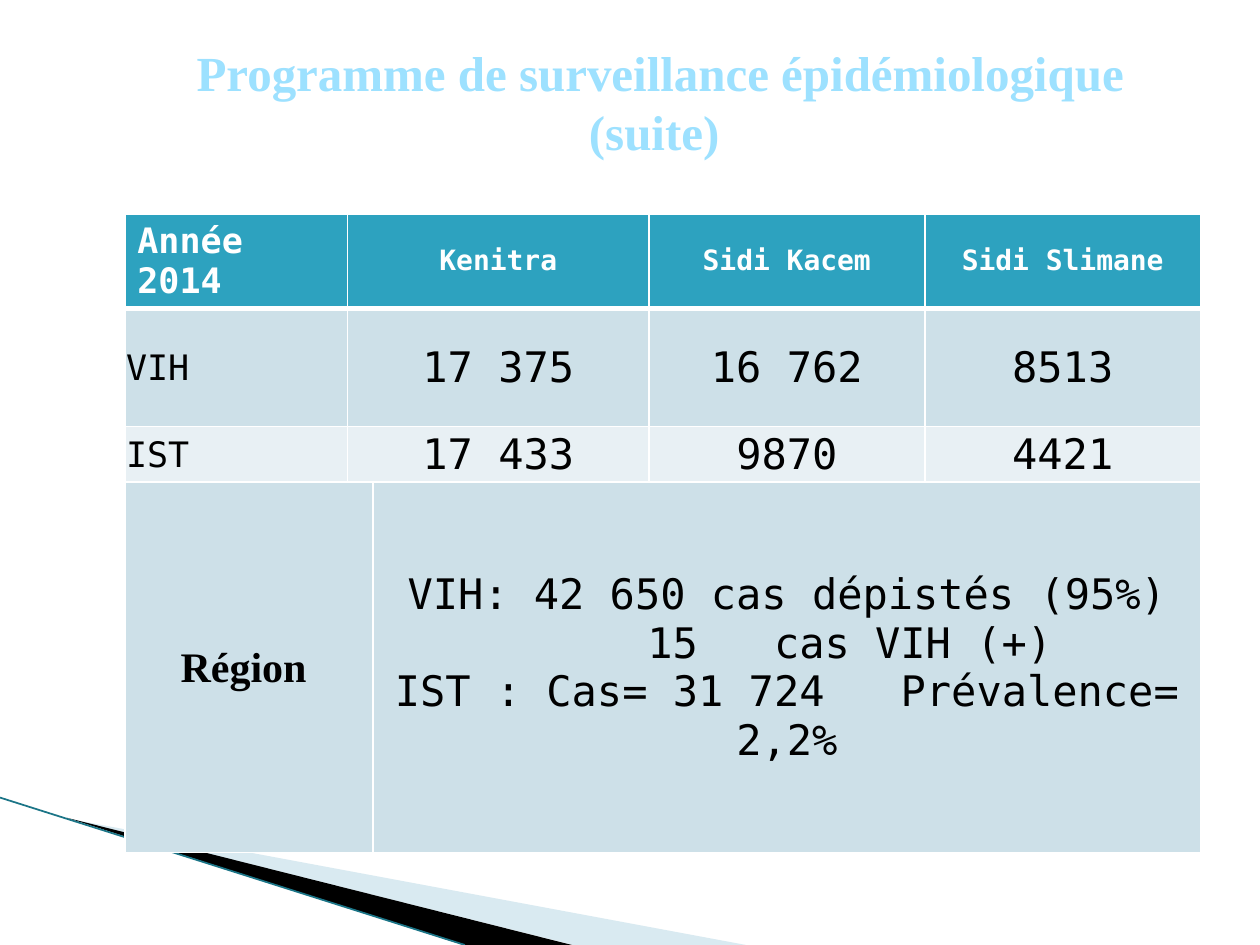
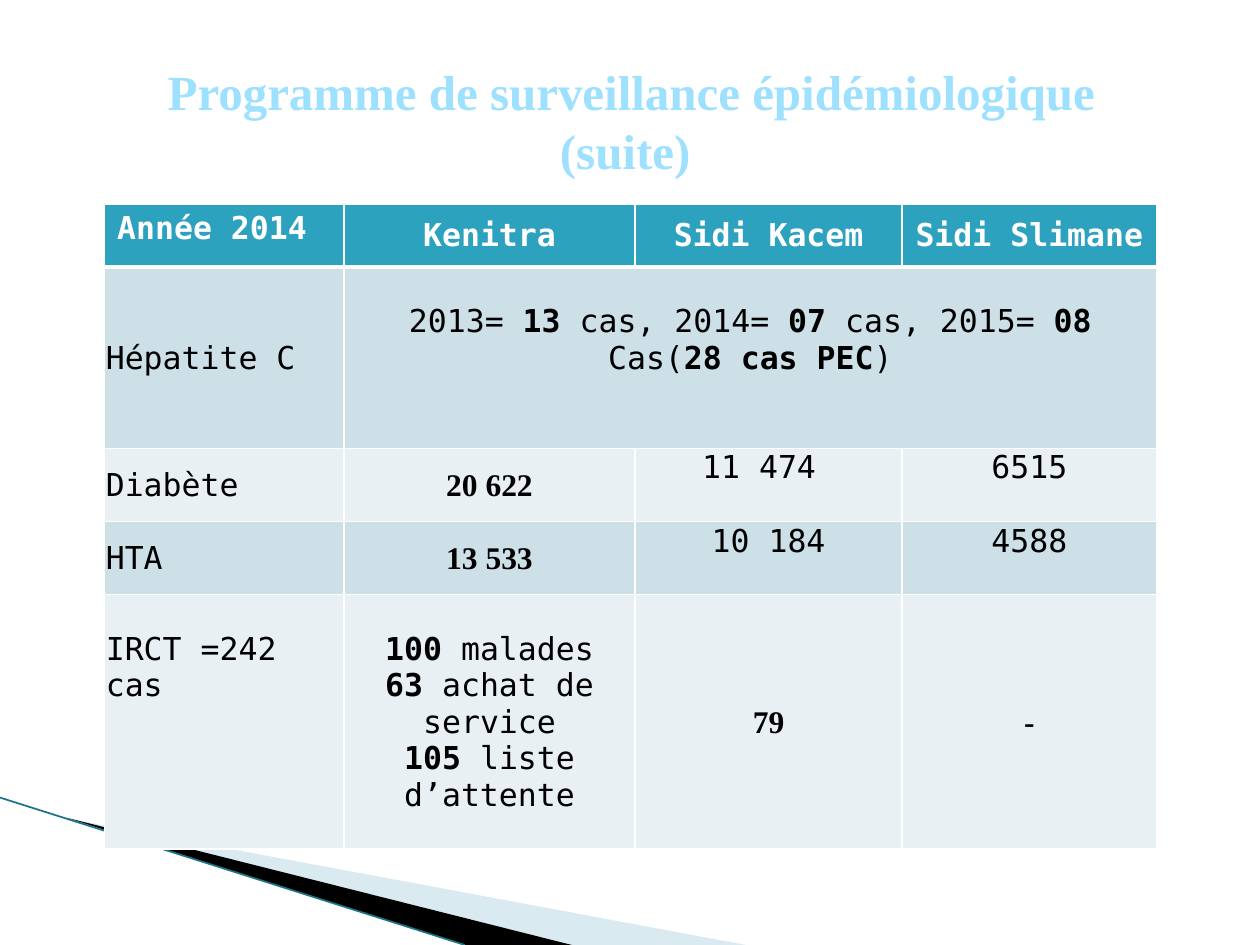
import dataclasses

import lxml.etree
import pptx
import pptx.dml.color
import pptx.enum.shapes
import pptx.enum.text
import pptx.oxml.ns
import pptx.util

COLORS = {
    "title": "9DE1FF", "header": "2DA2BF", "odd_row": "CDE0E8", "even_row": "E8F0F4",
    "header_text": "FFFFFF", "text": "000000", "border": "FFFFFF",
    "pale_wedge": "A0CBDC", "dark_wedge": "000000", "edge": "1B7587",
}
MONO, SERIF = "DejaVu Sans Mono", "Times New Roman"
WIDTH, HEIGHT = pptx.util.Inches(10), pptx.util.Inches(7.5)
COLUMN, ROW = WIDTH / 100, HEIGHT / 75

ALIGN = pptx.enum.text.PP_ALIGN
ANCHOR = pptx.enum.text.MSO_ANCHOR
TITLE = "Programme de surveillance épidémiologique (suite) "
CITIES = ("Kenitra", "Sidi Kacem", "Sidi Slimane")
WIDE_GAP = 29  # extra points for a gap of three characters


def columns(count):
    return round(count * COLUMN)


def rows(count):
    return round(count * ROW)


@dataclasses.dataclass
class Cell:
    """Lines of one table cell: *bold* parts, ~ for a wide gap."""
    lines: tuple
    span: int = 1
    font: dict = dataclasses.field(default_factory=dict)
    align: object = ALIGN.CENTER
    anchor: object = ANCHOR.MIDDLE
    top: float = 0.1
    indents: dict = dataclasses.field(default_factory=dict)


def rgb(name):
    return pptx.dml.color.RGBColor.from_string(COLORS[name])


def apply(target, values):
    for key, value in values.items():
        setattr(target, key, value)


def add_run(paragraph, text, font, color):
    run = paragraph.add_run()
    run.text = text
    apply(run.font, font)
    run.font.color.rgb = rgb(color)
    return run


def write_line(paragraph, line, font, color):
    for part, piece in enumerate(line.split("~")):
        if part:
            gap = add_run(paragraph, " ", font, color)
            gap.font._element.set("spc", str(WIDE_GAP * 100))
        for index, text in enumerate(piece.split("*")):
            if text:
                bold = font["bold"] or index % 2 == 1
                add_run(paragraph, text, {**font, "bold": bold}, color)


def add_borders(cell, bottom):
    properties = cell._tc.get_or_add_tcPr()
    for side, width in {"L": 1, "R": 1, "T": 1, "B": bottom}.items():
        line = lxml.etree.SubElement(properties, pptx.oxml.ns.qn(f"a:ln{side}"),
                                     w=str(pptx.util.Pt(width)))
        fill = lxml.etree.SubElement(line, pptx.oxml.ns.qn("a:solidFill"))
        lxml.etree.SubElement(fill, pptx.oxml.ns.qn("a:srgbClr"), val=COLORS["border"])


def fill_cell(target, content, font, color, inset):
    side, top, bottom = inset
    apply(target, {
        "margin_left": columns(side), "margin_right": columns(side),
        "margin_top": rows(max(top, content.top)), "margin_bottom": rows(bottom),
        "vertical_anchor": content.anchor,
    })
    frame = target.text_frame
    for index, line in enumerate(content.lines):
        paragraph = frame.add_paragraph() if index else frame.paragraphs[0]
        paragraph.alignment = content.align
        if index in content.indents:
            paragraph._p.get_or_add_pPr().set("marL", str(columns(content.indents[index])))
        write_line(paragraph, line, {**font, **content.font}, color)


def add_results(slide, left, top, widths, heights, records, size):
    """Place the results table; widths and heights are in grid units."""
    table = slide.shapes.add_table(len(heights), len(widths), columns(left), rows(top),
                                   columns(sum(widths)), rows(sum(heights))).table
    table.horz_banding = False
    for column, width in zip(table.columns, widths):
        column.width = columns(width)
    for number, (height, record) in enumerate(zip(heights, records)):
        table.rows[number].height = rows(height)
        heading = number == 0
        band = "header" if heading else "odd_row" if number % 2 else "even_row"
        for position in range(len(widths)):
            cell = table.cell(number, position)
            add_borders(cell, 3 if number == 0 else 1)
            cell.fill.solid()
            cell.fill.fore_color.rgb = rgb(band)
        font = {"name": MONO, "size": pptx.util.Pt(size), "bold": heading}
        position = 0
        for content in record:
            cell = table.cell(number, position)
            if content.span > 1:
                cell.merge(table.cell(number, position + content.span - 1))
            fill_cell(cell, content, font, "header_text" if heading else "text",
                      (1, 0.5, 0.5) if heading else (0.1, 0.1, 0))
            position += content.span


def add_wedge(slide, points, color, opacity=100):
    outline = [(columns(x), rows(y)) for x, y in points]
    builder = slide.shapes.build_freeform(*outline[0])
    builder.add_line_segments(outline[1:])
    wedge = builder.convert_to_shape()
    wedge.shadow.inherit = False
    wedge.line.fill.background()
    wedge.fill.solid()
    wedge.fill.fore_color.rgb = rgb(color)
    if opacity < 100:
        value = wedge._element.spPr.find(".//" + pptx.oxml.ns.qn("a:srgbClr"))
        lxml.etree.SubElement(value, pptx.oxml.ns.qn("a:alpha"), val=str(opacity * 1000))


def add_corner(slide):
    """Draw the wedges that sweep across the bottom left corner."""
    add_wedge(slide, [(5.5, 65), (59.2, 75), (45.5, 75)], "pale_wedge", 40)
    add_wedge(slide, [(5.3, 64.9), (45.4, 75), (36.8, 75)], "dark_wedge")
    edge = slide.shapes.add_connector(pptx.enum.shapes.MSO_CONNECTOR.STRAIGHT,
                                      0, rows(63.3), columns(36.9), rows(75))
    edge.line.color.rgb = rgb("edge")
    edge.line.width = pptx.util.Pt(1)
    lxml.etree.SubElement(edge._element.spPr, pptx.oxml.ns.qn("a:effectLst"))


def add_title(slide, left, top):
    frame = slide.shapes.add_textbox(columns(left), rows(top),
                                     columns(85.2), rows(10.4)).text_frame
    frame.word_wrap = True
    frame.auto_size = pptx.enum.text.MSO_AUTO_SIZE.SHAPE_TO_FIT_TEXT
    paragraph = frame.paragraphs[0]
    paragraph.alignment = ALIGN.CENTER
    write_line(paragraph, TITLE,
               {"name": SERIF, "size": pptx.util.Pt(28), "bold": True}, "title")


def label(text, **options):
    return Cell((text,), align=ALIGN.LEFT, **options)


def add_slide(deck, title_at, **results):
    slide = deck.slides.add_slide(deck.slide_layouts[6])
    add_corner(slide)
    add_results(slide, **results)
    add_title(slide, *title_at)


def add_infections(deck):
    small, city = {"size": pptx.util.Pt(20)}, {"size": pptx.util.Pt(16)}
    serif = {"name": SERIF, "bold": True}

    def by_city(values, font):
        return [Cell((value,), span=2 if index == 0 else 1, font=font)
                for index, value in enumerate(values)]

    records = [
        [label("Année 2014", font=small, anchor=ANCHOR.TOP), *by_city(CITIES, city)],
        [label("VIH", font=small), *by_city(("17 375", "16 762", "8513"), {})],
        [label("IST", font=small), *by_city(("17 433", "9870", "4421"), {})],
        [Cell(("Région ",), span=2, font=serif),
         Cell(("VIH: 42 650 cas dépistés (95%)", "15~cas VIH (+)",
               "IST : Cas= 31 724~Prévalence= 2,2%"), span=3, indents={1: 10})],
    ]
    add_slide(deck, (9.8, 2.9), left=9.9, top=17, widths=(17.7, 2, 21.9, 21.9, 21.9),
              heights=(7.3, 9.4, 4.4, 29.4), records=records, size=24)


def add_chronic_diseases(deck):
    serif = {"name": SERIF, "bold": True}
    raised = {"anchor": ANCHOR.TOP, "top": 2.9}

    def disease(name, first, *others):
        return [label(name), Cell((first,), font=serif),
                *(Cell((value,), anchor=ANCHOR.TOP) for value in others)]

    records = [
        [label("Année 2014", anchor=ANCHOR.TOP), *(Cell((city,)) for city in CITIES)],
        [label("Hépatite C"),
         Cell(("2013= *13* cas, 2014= *07 *cas, 2015= *08* Cas(*28 cas PEC*)",),
              span=3, **raised)],
        disease("Diabète", "20 622", "11 474 ", "6515"),
        disease("HTA", "13 533", "10 184", "4588"),
        [label("IRCT =242 cas", **raised),
         Cell(("*100 *malades", "*63* achat de service", "*105* liste d’attente")),
         Cell(("79",), font=serif), Cell(("-",), font=serif)],
    ]
    add_slide(deck, (7.5, 4.4), left=8.3, top=16.2, widths=(19, 23.1, 21.2, 20.2),
              heights=(5, 14.4, 5.8, 5.8, 20.2), records=records, size=18)


def main():
    deck = pptx.Presentation()
    apply(deck, {"slide_width": WIDTH, "slide_height": HEIGHT})
    add_infections(deck)
    add_chronic_diseases(deck)
    deck.save("out.pptx")


if __name__ == "__main__":
    main()
